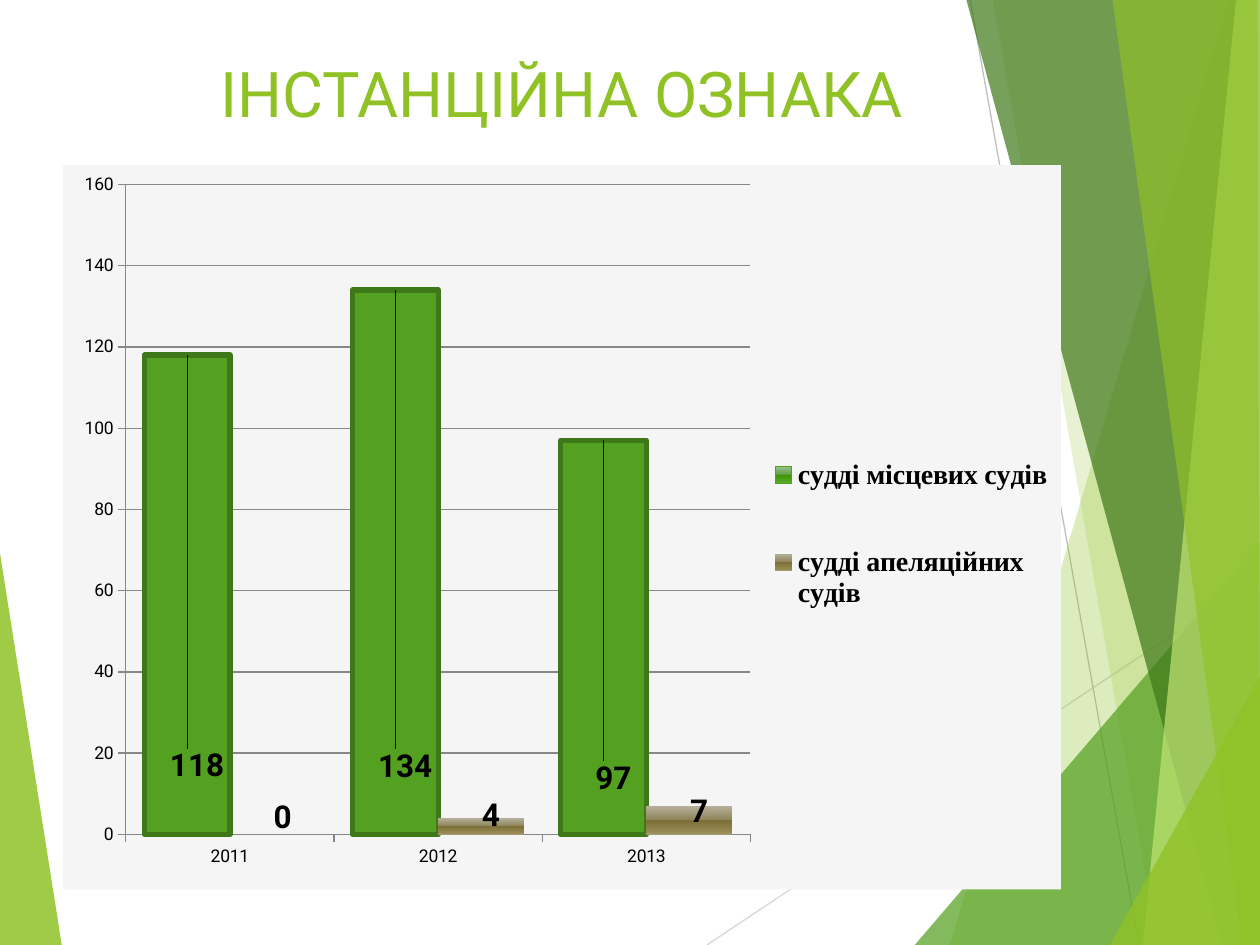
from lxml import etree
from pptx import Presentation
from pptx import util as u
from pptx.chart.data import CategoryChartData
from pptx.dml.color import RGBColor
from pptx.enum import chart as charts, shapes, text
from pptx.oxml import parse_xml
from pptx.oxml.ns import nsdecls, qn

COLORS = {
    "green": "90C226", "leaf": "54A021", "forest": "3F7819", "lime": "C0E474",
    "pale": "D9D9D9", "silver": "BFBFBF", "axis": "878787",
    "panel": "F5F5F5", "black": "000000",
}
RIGHT, BOTTOM = 10.01, 7.5
FACETS = [
    ("green", 30, [(9.75, 0), (7.54, BOTTOM), (RIGHT, BOTTOM), (RIGHT, 0)]),
    ("green", 20, [(7.88, 0), (9.19, BOTTOM), (RIGHT, BOTTOM), (RIGHT, 0)]),
    ("leaf", 72, [(7.26, BOTTOM), (RIGHT, 4.29), (RIGHT, BOTTOM)]),
    ("forest", 70, [(7.67, 0), (9.7, BOTTOM), (RIGHT, BOTTOM), (RIGHT, 0)]),
    ("lime", 70, [(9.81, 0), (9.07, BOTTOM), (RIGHT, BOTTOM), (RIGHT, 0)]),
    ("green", 65, [(8.83, 0), (9.86, BOTTOM), (10, BOTTOM), (9.98, 0)]),
    ("green", 80, [(8.81, BOTTOM), (RIGHT, 5.35), (RIGHT, BOTTOM)]),
]
YEARS = ["2011", "2012", "2013"]
SERIES = [
    {
        "name": "судді місцевих судів", "values": [118, 134, 97],
        "stops": [(0, "9BBF90"), (49, "5B9E3B"), (49, "3C9401"), (92, "54AA26"), (100, "70B555")],
        "shifts": [(0.01, 0.6), (0.01, 0.69), (0.01, 0.5)],
        "point_fill": "leaf",
    },
    {
        "name": "судді апеляційних судів", "values": [0, 4, 7],
        "stops": [(0, "B6B09B"), (49, "8F855B"), (49, "7B6F36"), (92, "958851"), (100, "A49A6F")],
        "shifts": [(0.01, 0.01), (0.01, 0.03), (0.01, 0.04)],
        "point_fill": None,
    },
]


def apply(target, values):
    """Set attributes on target from a dict of format values."""
    for name, value in values.items():
        setattr(target, name, value)


def layout_xml(**values):
    """Return a manual chart layout element."""
    parts = "".join(f'<c:{name} val="{value}"/>' for name, value in values.items())
    return parse_xml(f'<c:layout {nsdecls("c")}><c:manualLayout>{parts}</c:manualLayout></c:layout>')


class SlideBuilder:
    """Hold the style and the current slide."""

    def __init__(self, slide, font="Roboto", legend_font="Times New Roman"):
        self.slide, self.font, self.legend_font = slide, font, legend_font

    def color(self, name):
        """Return a named colour."""
        return RGBColor.from_string(COLORS[name])

    def paint(self, fill, name):
        """Fill with a solid named colour."""
        fill.solid()
        fill.fore_color.rgb = self.color(name)

    def stroke(self, line, name, width):
        """Style a line."""
        line.color.rgb = self.color(name)
        line.width = u.Pt(width)

    def facet(self, name, opacity, points):
        """Add a translucent polygon."""
        corners = [(u.Inches(x), u.Inches(y)) for x, y in points]
        builder = self.slide.shapes.build_freeform(*corners[0])
        builder.add_line_segments(corners[1:], close=True)
        shape = builder.convert_to_shape()
        shape.shadow.inherit = False
        shape.line.fill.background()
        self.paint(shape.fill, name)
        color = shape.fill._xPr.find(".//" + qn("a:srgbClr"))
        etree.SubElement(color, qn("a:alpha"), val=str(opacity * 1000))

    def line(self, name, start, end):
        """Add a thin straight line."""
        ends = [u.Inches(value) for value in (*start, *end)]
        connector = self.slide.shapes.add_connector(shapes.MSO_CONNECTOR.STRAIGHT, *ends)
        self.stroke(connector.line, name, 0.75)
        etree.SubElement(connector._element.spPr, qn("a:effectLst"))

    def title(self, wording, box):
        """Add the centred heading."""
        frame = self.slide.shapes.add_textbox(*map(u.Inches, box)).text_frame
        apply(frame, {"word_wrap": True, "margin_top": u.Inches(0.08),
                      "vertical_anchor": text.MSO_ANCHOR.TOP})
        paragraph = frame.paragraphs[0]
        paragraph.alignment = text.PP_ALIGN.CENTER
        run = paragraph.add_run()
        run.text = wording
        apply(run.font, {"name": self.font, "size": u.Pt(36)})
        run.font.color.rgb = self.color("green")

    def chart(self, categories, series_list, box):
        """Add the clustered column chart."""
        data = CategoryChartData()
        data.categories = categories
        for entry in series_list:
            data.add_series(entry["name"], entry["values"])
        chart = self.slide.shapes.add_chart(
            charts.XL_CHART_TYPE.COLUMN_CLUSTERED, *map(u.Inches, box), data).chart
        apply(chart, {"has_title": False, "has_legend": True})
        apply(chart.font, {"name": self.font, "size": u.Pt(10)})
        chart.font.color.rgb = self.color("black")
        apply(chart.plots[0], {"gap_width": 43, "overlap": 0, "vary_by_categories": False})
        apply(chart.value_axis, {"minimum_scale": 0, "maximum_scale": 160, "major_unit": 20,
                                 "has_major_gridlines": True})
        self.stroke(chart.value_axis.major_gridlines.format.line, "axis", 0.75)
        for axis in (chart.category_axis, chart.value_axis):
            axis.major_tick_mark = charts.XL_TICK_MARK.OUTSIDE
            self.stroke(axis.format.line, "axis", 0.75)
        self.legend(chart.legend)
        self.chart_area(chart)
        for series, entry in zip(chart.plots[0].series, series_list):
            self.columns(series, entry)

    def legend(self, legend):
        """Place and style the legend."""
        apply(legend, {"position": charts.XL_LEGEND_POSITION.RIGHT, "include_in_layout": False})
        apply(legend.font, {"name": self.legend_font, "size": u.Pt(16), "bold": True})
        legend._element.find(qn("c:legendPos")).addnext(
            layout_xml(xMode="edge", yMode="edge", x=0.7, y=0.33, w=0.3, h=0.36))

    def chart_area(self, chart):
        """Place the plot and colour the panel behind it."""
        plot_area = chart._chartSpace.chart.plotArea
        for old in plot_area.findall(qn("c:layout")):
            plot_area.remove(old)
        plot_area.insert(0, layout_xml(layoutTarget="inner", xMode="edge", yMode="edge",
                                       x=0.063, y=0.027, w=0.626, h=0.897))
        chart._chartSpace.chart.addnext(parse_xml(
            f'<c:spPr {nsdecls("c", "a")}><a:solidFill><a:srgbClr val="{COLORS["panel"]}"/>'
            "</a:solidFill><a:ln><a:noFill/></a:ln></c:spPr>"))

    def columns(self, series, entry):
        """Style one series with its gradient, points and labels."""
        series.invert_if_negative = False
        series.format.fill.gradient()
        series.format.fill.gradient_angle = 270
        stops = series._element.find(".//" + qn("a:gsLst"))
        for old in list(stops):
            stops.remove(old)
        for position, value in entry["stops"]:
            stop = etree.SubElement(stops, qn("a:gs"), pos=str(position * 1000))
            etree.SubElement(stop, qn("a:srgbClr"), val=value)
        if entry["point_fill"]:
            self.stroke(series.format.line, entry["point_fill"], 0.9)
        for index, (x, y) in enumerate(entry["shifts"]):
            point = series.points[index]
            if entry["point_fill"]:
                self.paint(point.format.fill, entry["point_fill"])
                self.stroke(point.format.line, "forest", 3)
            label = point.data_label
            apply(label.font, {"size": u.Pt(18), "bold": True})
            label.font.color.rgb = self.color("black")
            label.position = charts.XL_LABEL_POSITION.OUTSIDE_END
            series._element.findall(".//" + qn("c:dLbl"))[index].insert(1, layout_xml(x=x, y=y))


def main():
    """Build and save the slide."""
    presentation = Presentation()
    apply(presentation, {"slide_width": u.Inches(10), "slide_height": u.Inches(7.5)})
    builder = SlideBuilder(presentation.slides.add_slide(presentation.slide_layouts[6]))
    builder.facet("green", 85, [(0, 4.39), (0.49, BOTTOM), (0, BOTTOM)])
    builder.line("pale", (5.61, BOTTOM), (RIGHT, 4.57))
    builder.line("silver", (7.7, 0), (9.04, BOTTOM))
    for facet in FACETS:
        builder.facet(*facet)
    builder.title("ІНСТАНЦІЙНА ОЗНАКА", (0.5, 0.35, 7.92, 0.88))
    builder.chart(YEARS, SERIES, (0.5, 1.31, 7.92, 5.75))
    presentation.save("out.pptx")


if __name__ == "__main__":
    main()
